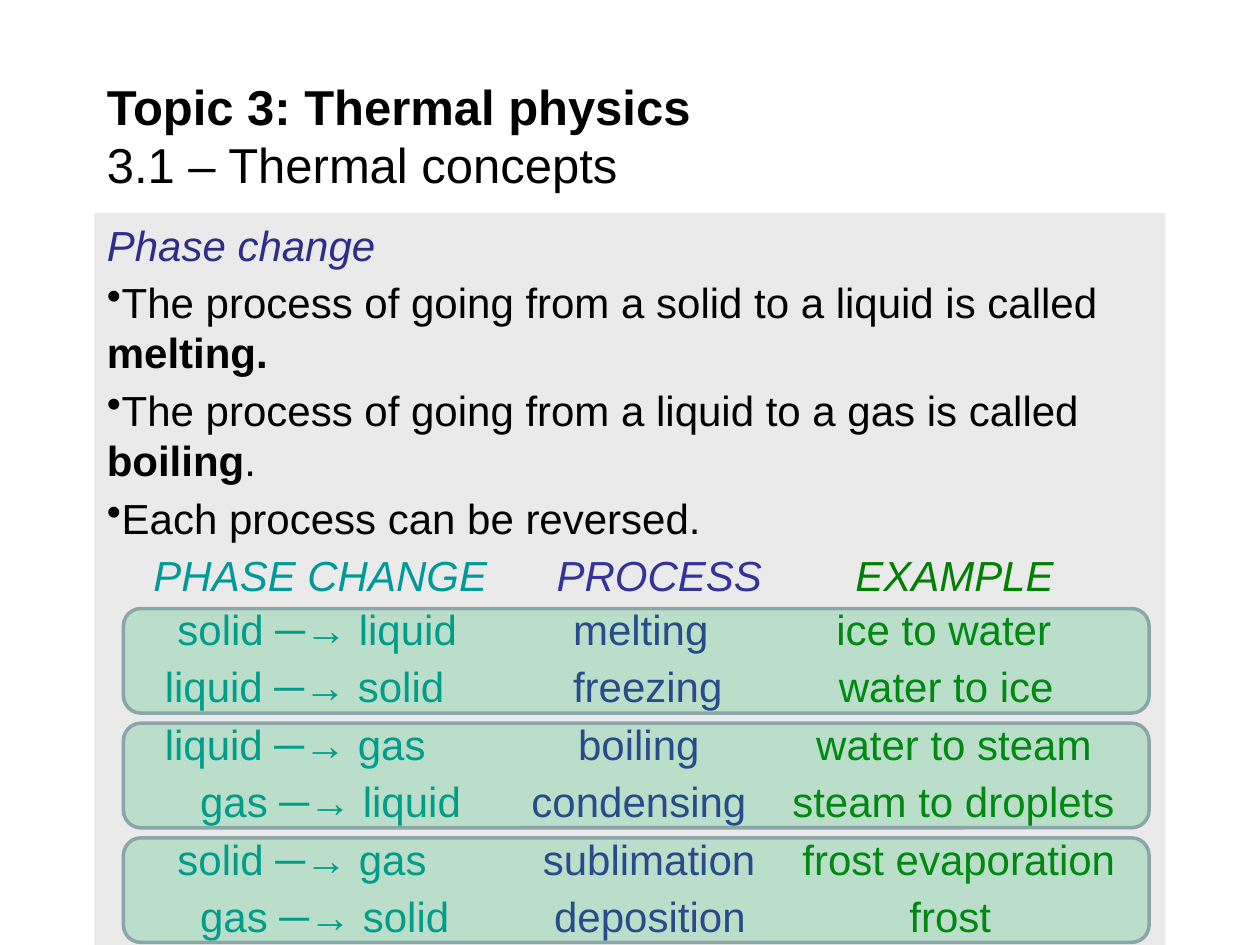
from typing import NamedTuple

from lxml import etree
from pptx import Presentation
from pptx.dml.color import RGBColor
from pptx.enum.shapes import MSO_SHAPE as Shape
from pptx.enum.text import MSO_ANCHOR as Anchor, PP_ALIGN as Align
from pptx.oxml.ns import qn
from pptx.util import Inches, Pt

BLACK, NAVY = "000000", "2D2D8A"
TEAL, INDIGO, GREEN = "009999", "333399", "008000"
COLUMN_COLORS = (TEAL, INDIGO, GREEN)
PANEL_FILL, PAIR_FILL, PAIR_LINE = "EAEAEA", "00B050", "8AA6A8"


class Row(NamedTuple):
    """One line of the phase table: its cells and where each starts, in inches."""
    cells: tuple[str, str, str]
    stops: tuple[float, float, float]
    space: float = 4
    italic: bool = False


BULLETS = (
    (("The process of going from a solid to a liquid is called ", False),
     ("melting.", True)),
    (("The process of going from a liquid to a gas is called ", False),
     ("boiling", True), (".", False)),
    (("Each process can be reversed.", False),),
)
ROWS = (
    Row(("PHASE CHANGE", "PROCESS", "EXAMPLE"), (0.37, 3.57, 5.94), italic=True),
    Row(("solid ─→ liquid", "melting", "ice to water"), (0.56, 3.7, 5.79), space=2),
    Row(("liquid ─→ solid", "freezing", "water to ice"), (0.46, 3.7, 5.81)),
    Row(("liquid ─→ gas", "boiling", "water to steam"), (0.46, 3.74, 5.63)),
    Row(("gas ─→ liquid", "condensing", "steam to droplets"), (0.74, 3.37, 5.44)),
    Row(("solid ─→ gas", "sublimation", "frost evaporation"), (0.56, 3.46, 5.52)),
    Row(("gas ─→ solid", "deposition", "frost"), (0.74, 3.55, 6.37)),
)


def rgb(value: str) -> RGBColor:
    return RGBColor.from_string(value)


def add_run(paragraph, text: str, color: str = BLACK, size: float = 24,
            bold: bool = False, italic: bool = False) -> None:
    run = paragraph.add_run()
    run.text = text
    font = run.font
    font.name, font.size = "Arial", Pt(size)
    font.bold, font.italic = bold, italic
    font.color.rgb = rgb(color)


def add_line(frame, space: float):
    paragraph = frame.add_paragraph()
    paragraph.alignment = Align.LEFT
    paragraph.space_before = Pt(space)
    return paragraph


def add_bullet(frame, parts) -> None:
    paragraph = add_line(frame, 4)
    props = paragraph._p.get_or_add_pPr()
    props.set("marL", "0")
    props.set("indent", "0")
    etree.SubElement(props, qn("a:buChar"), char="•")
    for text, bold in parts:
        add_run(paragraph, text, bold=bold)


def add_row(frame, row: Row) -> None:
    paragraph = add_line(frame, row.space)
    tabs = etree.SubElement(paragraph._p.get_or_add_pPr(), qn("a:tabLst"))
    for stop in row.stops:
        etree.SubElement(tabs, qn("a:tab"), pos=str(Inches(stop)), algn="l")
    for text, color in zip(row.cells, COLUMN_COLORS):
        add_run(paragraph, "\t" + text, color, italic=row.italic)


def add_title(slide) -> None:
    title = slide.shapes.add_textbox(Inches(0.75), Inches(0.58), Inches(8.5), Inches(0.98))
    frame = title.text_frame
    frame.word_wrap = True
    frame.vertical_anchor = Anchor.MIDDLE
    heading = frame.paragraphs[0]
    add_run(heading, "Topic 3: Thermal physics", size=28, bold=True)
    heading.add_line_break()
    add_run(heading, "3.1 – Thermal concepts", size=28)


def add_panel(slide) -> None:
    panel = slide.shapes.add_shape(
        Shape.RECTANGLE, Inches(0.75), Inches(1.69), Inches(8.5), Inches(5.81))
    panel.shadow.inherit = False
    panel.fill.solid()
    panel.fill.fore_color.rgb = rgb(PANEL_FILL)
    panel.line.fill.background()
    frame = panel.text_frame
    frame.word_wrap = True
    frame.vertical_anchor = Anchor.TOP
    subheading = frame.paragraphs[0]
    subheading.alignment = Align.LEFT
    add_run(subheading, "Phase change", NAVY, italic=True)
    for parts in BULLETS:
        add_bullet(frame, parts)
    for row in ROWS:
        add_row(frame, row)


def add_pair_frame(slide, top: float) -> None:
    """Draw the see-through frame around a process and its reverse."""
    pair = slide.shapes.add_shape(
        Shape.ROUNDED_RECTANGLE, Inches(0.98), Inches(top), Inches(8.14), Inches(0.83))
    pair.shadow.inherit = False
    pair.fill.solid()
    pair.fill.fore_color.rgb = rgb(PAIR_FILL)
    color = pair._element.spPr.find(qn("a:solidFill"))[0]
    etree.SubElement(color, qn("a:alpha"), val="20000")
    pair.line.color.rgb = rgb(PAIR_LINE)
    pair.line.width = Pt(2)


def main() -> None:
    deck = Presentation()
    deck.slide_width, deck.slide_height = Inches(10), Inches(7.5)
    slide = deck.slides.add_slide(deck.slide_layouts[6])
    add_panel(slide)
    add_title(slide)
    for index in range(3):
        add_pair_frame(slide, 4.83 + 0.91 * index)
    deck.save("out.pptx")


if __name__ == "__main__":
    main()
